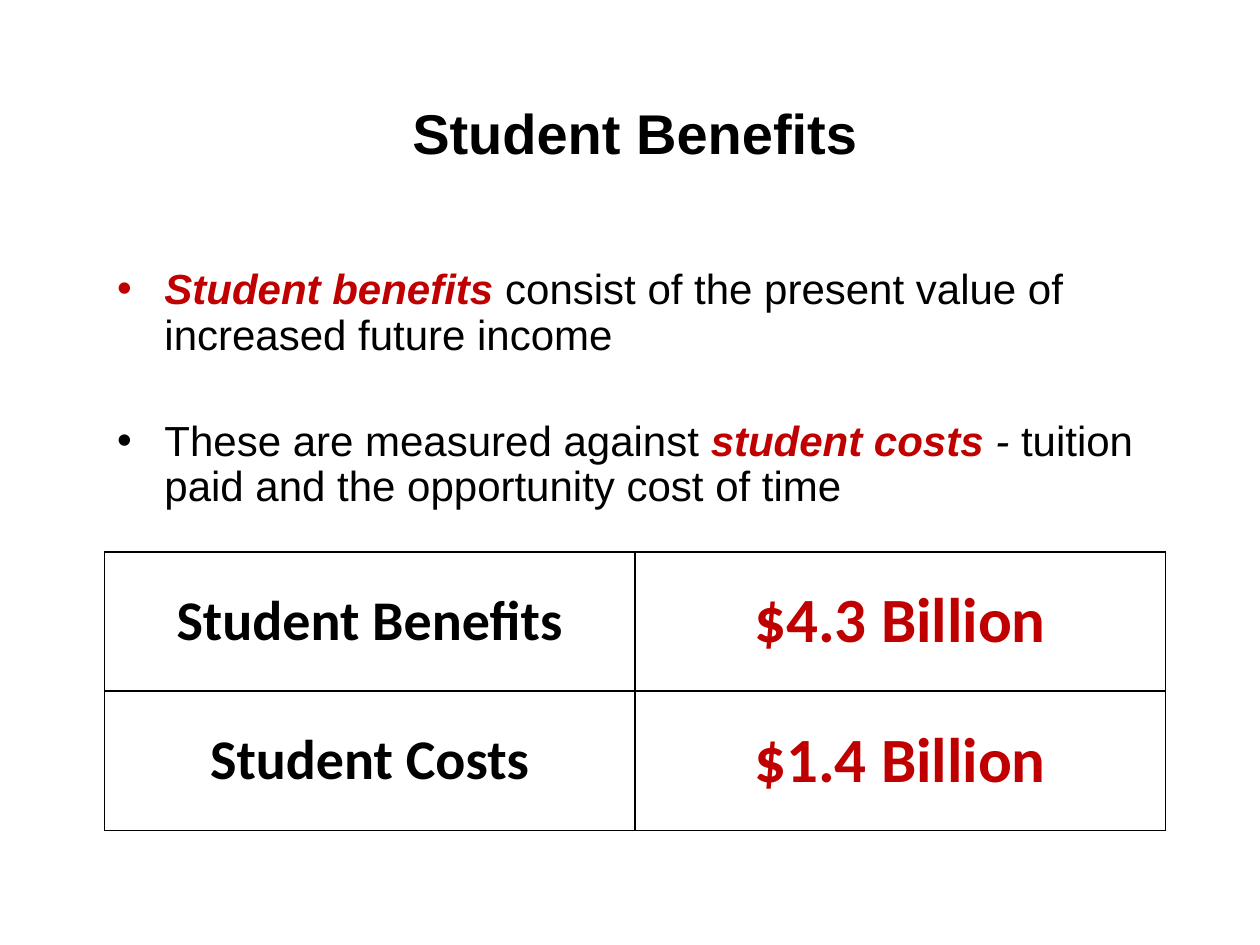
from dataclasses import dataclass

from lxml import etree
from pptx import Presentation
from pptx.dml.color import RGBColor
from pptx.enum.text import MSO_ANCHOR, MSO_AUTO_SIZE, PP_ALIGN
from pptx.oxml.ns import qn
from pptx.util import Inches, Length, Pt

CENTER = PP_ALIGN.CENTER
MIDDLE = MSO_ANCHOR.MIDDLE
NO_AUTOFIT = MSO_AUTO_SIZE.NONE
TITLE_AND_CONTENT = 1


@dataclass(frozen=True)
class Theme:
    ink: str = "000000"
    accent: str = "C00000"
    paper: str = "FFFFFF"
    text_font: str = "Arial"
    table_font: str = "Calibri"
    title_size: int = 32
    body_size: int = 24
    label_size: int = 32
    amount_size: int = 36
    border_width: int = 1


@dataclass(frozen=True)
class Span:
    text: str
    strong: bool = False
    italic: bool = False


@dataclass(frozen=True)
class Amount:
    label: str
    value: str


THEME = Theme()
LEFT, WIDTH = Inches(0.83), Inches(8.42)
BULLETS = [
    [
        Span("Student benefits ", strong=True, italic=True),
        Span("consist of the present value of increased future income"),
    ],
    [
        Span("These are measured against "),
        Span("student costs ", strong=True, italic=True),
        Span("- ", italic=True),
        Span("tuition paid and the opportunity cost of time"),
    ],
]
AMOUNTS = [
    Amount("Student Benefits", "$4.3 Billion"),
    Amount("Student Costs", "$1.4 Billion"),
]


def style_font(font, name: str, size: int, color: str, bold: bool, italic: bool = False) -> None:
    font.name = name
    font.size = Pt(size)
    font.bold = bold
    font.italic = italic
    font.color.rgb = RGBColor.from_string(color)


def place(shape, top: Length, height: Length) -> None:
    shape.left, shape.top, shape.width, shape.height = LEFT, top, WIDTH, height


def fill_title(title) -> None:
    place(title, Inches(0.42), Inches(1.25))
    frame = title.text_frame
    frame.text = "Student Benefits"
    frame.auto_size = NO_AUTOFIT
    frame.vertical_anchor = MIDDLE
    para = frame.paragraphs[0]
    para.alignment = CENTER
    style_font(para.runs[0].font, THEME.text_font, THEME.title_size, THEME.ink, True)


def fill_bullets(body) -> None:
    place(body, Inches(2.08), Inches(2.12))
    frame = body.text_frame
    frame.auto_size = NO_AUTOFIT
    for index, spans in enumerate(BULLETS):
        para = frame.add_paragraph() if index else frame.paragraphs[0]
        para.line_spacing = 0.9
        para.space_before = Pt(35 if index else 0)
        for span in spans:
            run = para.add_run()
            run.text = span.text
            color = THEME.accent if span.strong else THEME.ink
            style_font(run.font, THEME.text_font, THEME.body_size, color, span.strong, span.italic)


def add_borders(cell) -> None:
    properties = cell._tc.get_or_add_tcPr()
    for position, side in enumerate(("a:lnL", "a:lnR", "a:lnT", "a:lnB")):
        line = etree.Element(qn(side), w=str(Pt(THEME.border_width)))
        fill = etree.SubElement(line, qn("a:solidFill"))
        etree.SubElement(fill, qn("a:srgbClr"), val=THEME.ink)
        properties.insert(position, line)


def fill_cell(cell, text: str, size: int, color: str) -> None:
    cell.text = text
    cell.vertical_anchor = MIDDLE
    cell.fill.solid()
    cell.fill.fore_color.rgb = RGBColor.from_string(THEME.paper)
    para = cell.text_frame.paragraphs[0]
    para.alignment = CENTER
    style_font(para.runs[0].font, THEME.table_font, size, color, True)
    add_borders(cell)


def add_amounts(page) -> None:
    frame = page.shapes.add_table(len(AMOUNTS), 2, LEFT, Inches(4.38), WIDTH, Inches(2.21))
    table = frame.table
    table.first_row = False
    table.horz_banding = False
    for row, amount in enumerate(AMOUNTS):
        fill_cell(table.cell(row, 0), amount.label, THEME.label_size, THEME.ink)
        fill_cell(table.cell(row, 1), amount.value, THEME.amount_size, THEME.accent)


def main() -> None:
    deck = Presentation()
    deck.slide_width, deck.slide_height = Inches(10), Inches(7.5)
    page = deck.slides.add_slide(deck.slide_layouts[TITLE_AND_CONTENT])
    fill_title(page.shapes.title)
    fill_bullets(page.placeholders[1])
    add_amounts(page)
    deck.save("out.pptx")


if __name__ == "__main__":
    main()
